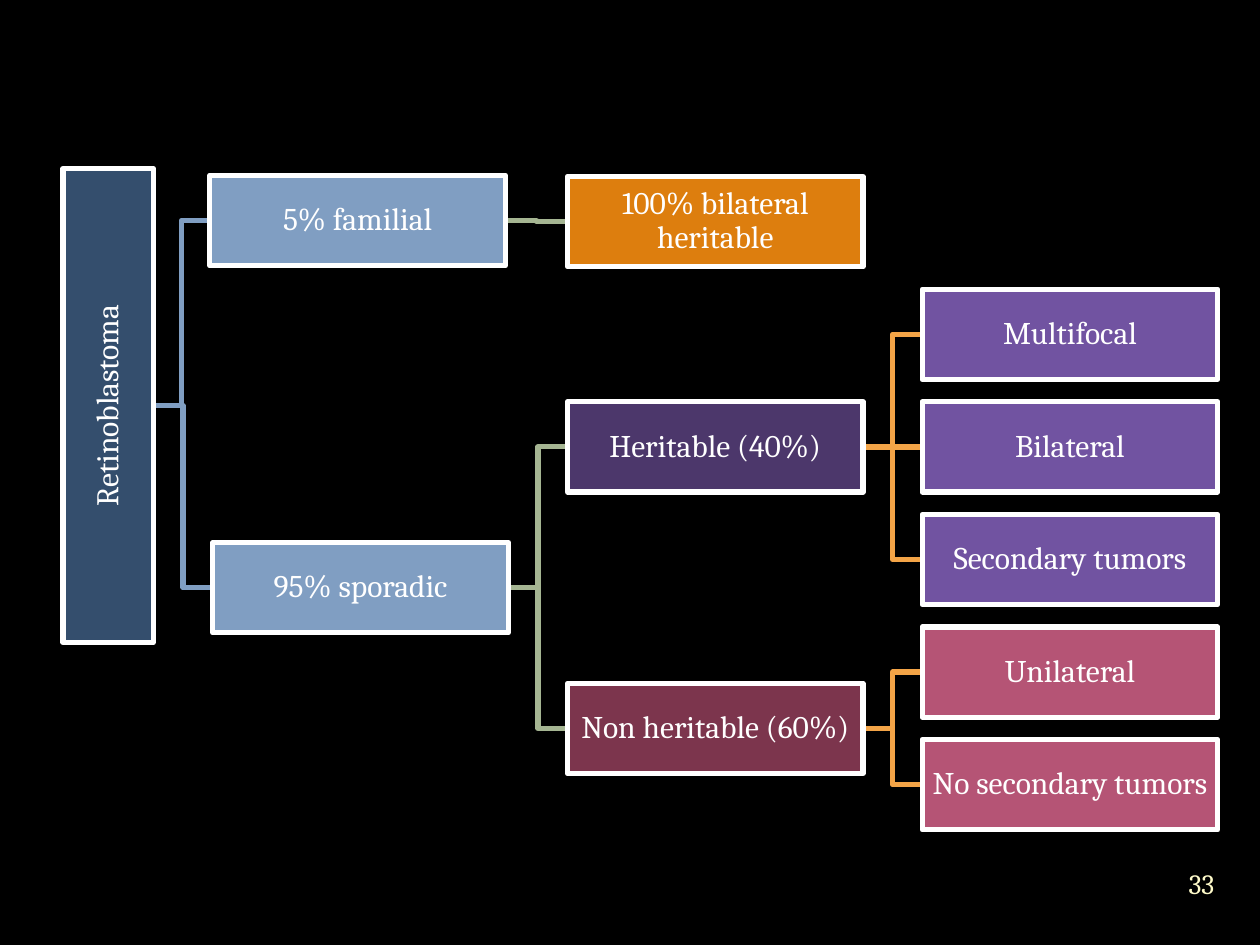
from lxml.etree import SubElement
from pptx import Presentation
from pptx.dml.color import RGBColor
from pptx.enum.shapes import MSO_CONNECTOR as Connector, MSO_SHAPE as Shape
from pptx.enum.text import MSO_ANCHOR as Anchor, PP_ALIGN as Align
from pptx.oxml.ns import qn
from pptx.util import Cm, Pt

COLORS = {
    "background": "000000", "white": "FFFFFF", "number": "FEFAC9",
    "root": "344E6D", "origin": "809EC2", "familial": "DD7E0E",
    "heritable": "4C376B", "heritable leaf": "7153A1",
    "non heritable": "7C354D", "non heritable leaf": "B55475",
    "origin link": "809EC2", "type link": "A5B592", "leaf link": "F3A447",
}
FONT = "Cambria"
ROOT = "Retinoblastoma"

# text, left edge in cm, row on the leaf grid, fill
BOXES = [
    ("5% familial", 4.23, -1.01, "origin"),
    ("100% bilateral heritable", 11.44, -1, "familial"),
    ("95% sporadic", 4.29, 2.25, "origin"),
    ("Heritable (40%)", 11.44, 1, "heritable"),
    ("Multifocal", 18.59, 0, "heritable leaf"),
    ("Bilateral", 18.59, 1, "heritable leaf"),
    ("Secondary tumors", 18.59, 2, "heritable leaf"),
    ("Non heritable (60%)", 11.44, 3.5, "non heritable"),
    ("Unilateral", 18.59, 3, "non heritable leaf"),
    ("No secondary tumors", 18.59, 4, "non heritable leaf"),
]
# parent, children, line colour
BRANCHES = [
    (ROOT, ["5% familial", "95% sporadic"], "origin link"),
    ("5% familial", ["100% bilateral heritable"], "type link"),
    ("95% sporadic", ["Heritable (40%)", "Non heritable (60%)"], "type link"),
    ("Heritable (40%)", ["Multifocal", "Bilateral", "Secondary tumors"], "leaf link"),
    ("Non heritable (60%)", ["Unilateral", "No secondary tumors"], "leaf link"),
]
BOX_WIDTH, BOX_HEIGHT = 5.96, 1.82
FIRST_ROW, ROW_PITCH = 5.83, 2.27
RIGHT_SIDE, LEFT_SIDE = 3, 1


def color(name):
    return RGBColor.from_string(COLORS[name])


def write(shape, text, size, color_name, inset, spacing):
    frame = shape.text_frame
    frame.word_wrap = True
    frame.vertical_anchor = Anchor.MIDDLE
    frame.margin_left = frame.margin_right = Cm(inset)
    frame.margin_top = frame.margin_bottom = Cm(inset)
    paragraph = frame.paragraphs[0]
    paragraph.alignment = Align.CENTER
    paragraph.line_spacing = spacing
    run = paragraph.add_run()
    run.text = text
    run.font.name = FONT
    run.font.size = Pt(size)
    run.font.color.rgb = color(color_name)


def add_box(slide, text, left, top, width, height, fill):
    box = slide.shapes.add_shape(
        Shape.RECTANGLE, Cm(left), Cm(top), Cm(width), Cm(height))
    box.shadow.inherit = False
    box.fill.solid()
    box.fill.fore_color.rgb = color(fill)
    box.line.color.rgb = color("white")
    box.line.width = Pt(3)
    write(box, text, 18, "white", 0.03, 0.9)
    return box


def add_link(slide, parent, child, color_name):
    """Join two boxes with a line that lies behind them."""
    level = parent.top + parent.height // 2 == child.top + child.height // 2
    kind = Connector.STRAIGHT if level else Connector.ELBOW
    link = slide.shapes.add_connector(kind, 0, 0, 0, 0)
    link.begin_connect(parent, RIGHT_SIDE)
    link.end_connect(child, LEFT_SIDE)
    link.line.color.rgb = color(color_name)
    link.line.width = Pt(3)
    SubElement(link._element.spPr, qn("a:effectLst"))
    slide.shapes._spTree.insert(2, link._element)


def main():
    presentation = Presentation()
    presentation.slide_width, presentation.slide_height = Cm(25.4), Cm(19.05)
    slide = presentation.slides.add_slide(presentation.slide_layouts[6])
    slide.background.fill.solid()
    slide.background.fill.fore_color.rgb = color("background")

    root = add_box(slide, ROOT, 1.27, 3.4, BOX_HEIGHT, 9.55, "root")
    root.text_frame._txBody.bodyPr.set("vert", "vert270")
    boxes = {ROOT: root}
    for text, left, row, fill in BOXES:
        top = FIRST_ROW + row * ROW_PITCH
        boxes[text] = add_box(slide, text, left, top, BOX_WIDTH, BOX_HEIGHT, fill)

    for parent, children, color_name in BRANCHES:
        for child in children:
            add_link(slide, boxes[parent], boxes[child], color_name)

    number = slide.shapes.add_textbox(Cm(23.37), Cm(17.17), Cm(1.7), Cm(1.27))
    write(number, "33", 16, "number", 0, 1.0)
    presentation.save("out.pptx")


if __name__ == "__main__":
    main()
